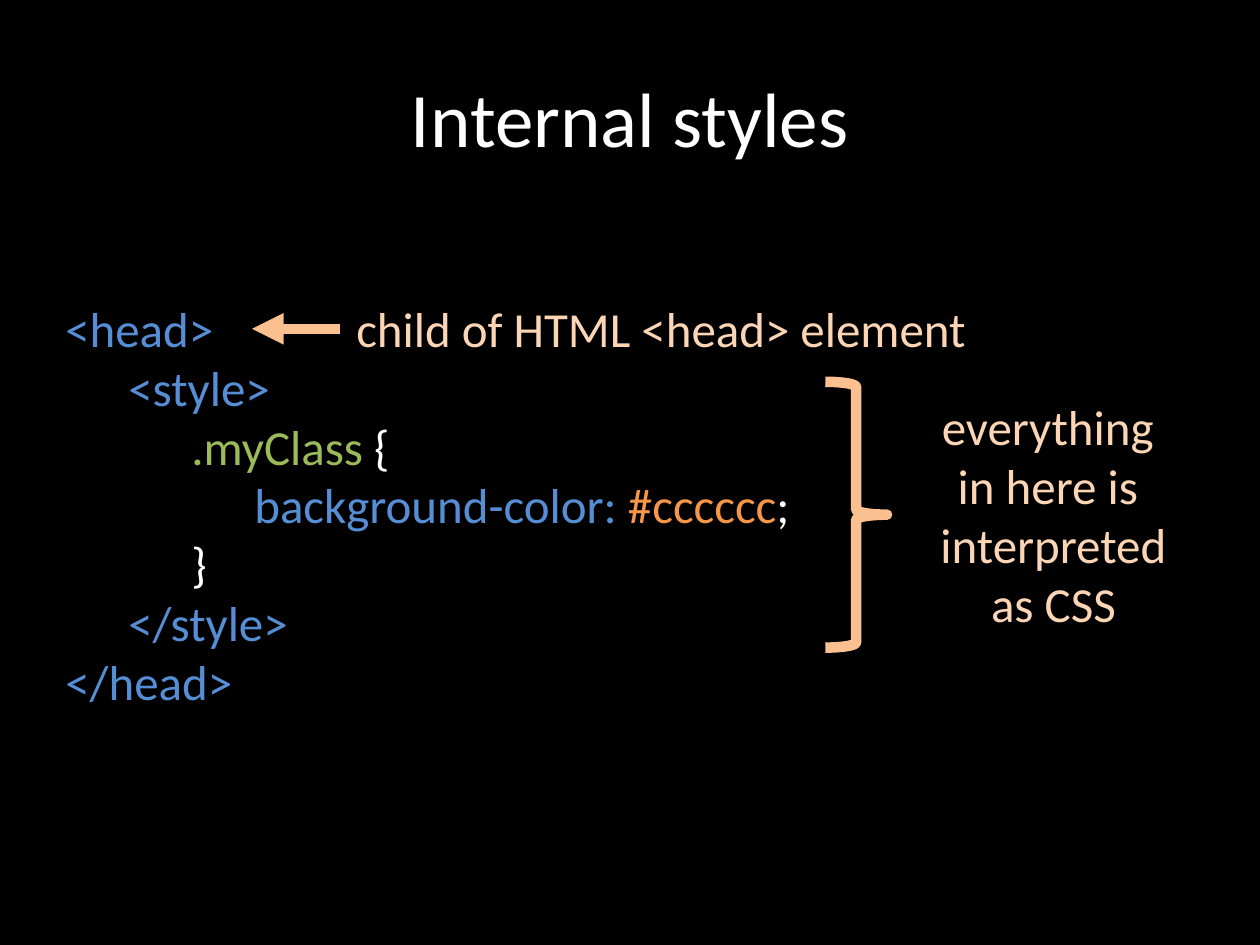
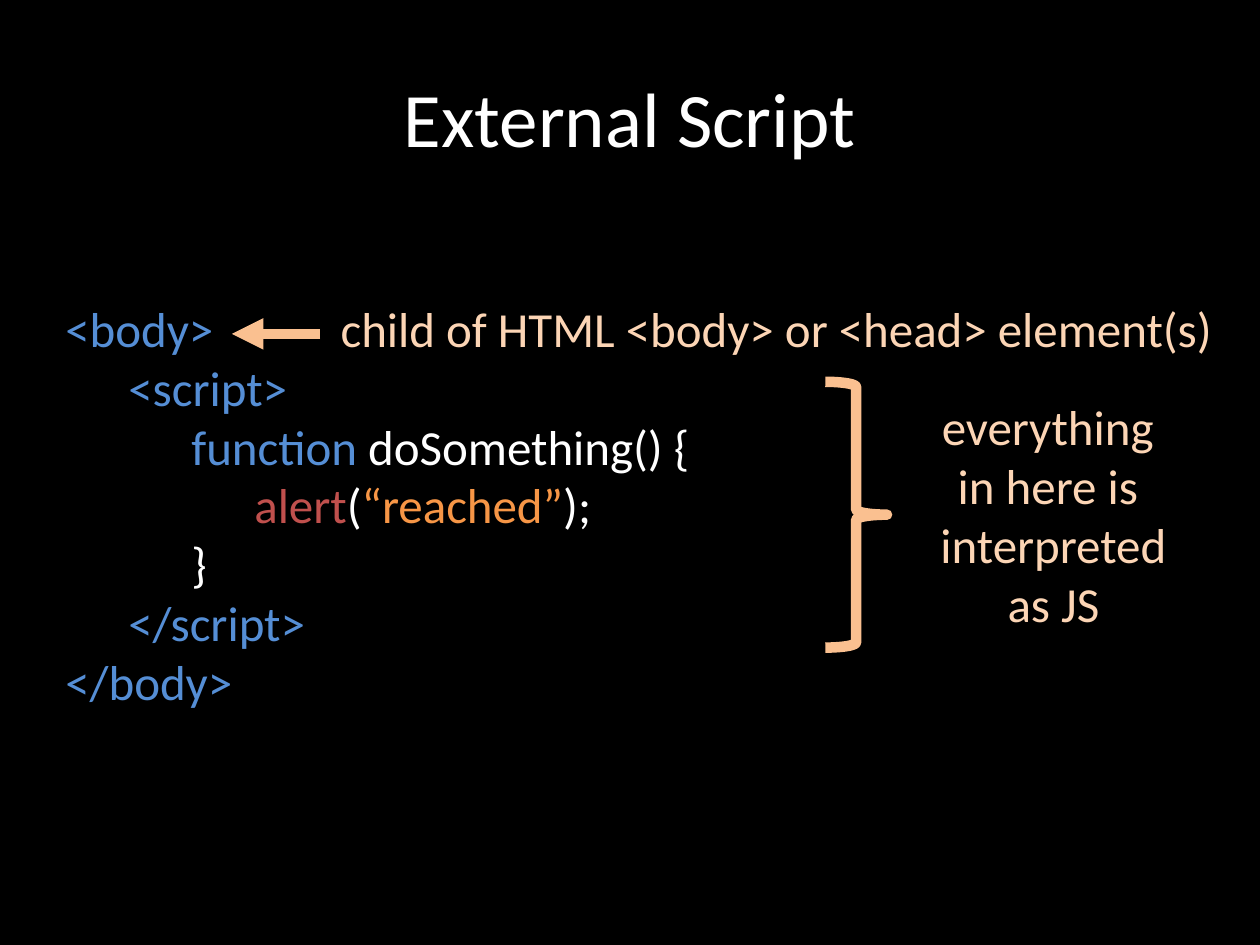
import pptx
import pptx.dml.color
import pptx.enum.shapes
import pptx.enum.text
import pptx.oxml
import pptx.oxml.ns
import pptx.util
import lxml.etree

RGBColor = pptx.dml.color.RGBColor
BLACK = RGBColor(0x00, 0x00, 0x00)
WHITE = RGBColor(0xFF, 0xFF, 0xFF)
BLUE = RGBColor(0x55, 0x8E, 0xD5)
GREEN = RGBColor(0x9B, 0xBB, 0x59)
ORANGE = RGBColor(0xF7, 0x96, 0x46)
RED = RGBColor(0xC0, 0x50, 0x4D)
PEACH = RGBColor(0xFC, 0xD5, 0xB5)
MARKER = RGBColor(0xFA, 0xC0, 0x90)

WIDTH = pptx.util.Inches(10)
HEIGHT = pptx.util.Inches(7.5)
COLUMN = WIDTH / 100
ROW = HEIGHT / 75
INDENT = pptx.util.Inches(0.5)
FONT = "Calibri"
CODE_LEFT, CODE_TOP = 4.2, 23.2
NOTE_LINES = ["everything ", "in here is ", "interpreted"]


def grid(left, top, width, height):
    return [round(length) for length in
            (left * COLUMN, top * ROW, width * COLUMN, height * ROW)]


def add_text(slide, lines, area, size=28, color=PEACH, centred=True,
             wrap=False, middle=False):
    box = slide.shapes.add_textbox(*grid(*area))
    frame = box.text_frame
    frame.word_wrap = wrap
    if middle:
        frame.vertical_anchor = pptx.enum.text.MSO_ANCHOR.MIDDLE
    else:
        frame.auto_size = pptx.enum.text.MSO_AUTO_SIZE.SHAPE_TO_FIT_TEXT
    align = pptx.enum.text.PP_ALIGN
    for number, line in enumerate(lines):
        level, pieces = (0, [(line, color)]) if isinstance(line, str) else line
        paragraph = frame.paragraphs[0] if number == 0 else frame.add_paragraph()
        paragraph.alignment = align.CENTER if centred else align.LEFT
        if level:
            properties = paragraph._p.get_or_add_pPr()
            properties.set("marL", str(level * INDENT))
            properties.set("indent", "0")
        for words, tint in pieces:
            run = paragraph.add_run()
            run.text = words
            run.font.name = FONT
            run.font.size = pptx.util.Pt(size)
            run.font.color.rgb = tint


def style_line(line):
    line.color.rgb = MARKER
    line.width = pptx.util.Pt(6)


def add_arrow(slide, start, end, row):
    left, top, right, _ = grid(end, row, start, 0)
    arrow = slide.shapes.add_connector(
        pptx.enum.shapes.MSO_CONNECTOR.STRAIGHT, right, top, left, top)
    style_line(arrow.line)
    qn = pptx.oxml.ns.qn
    tail = lxml.etree.SubElement(arrow.line._get_or_add_ln(), qn("a:tailEnd"))
    tail.set("type", "triangle")
    lxml.etree.SubElement(arrow._element.spPr, qn("a:effectLst"))


def add_brace(slide):
    brace = slide.shapes.add_shape(
        pptx.enum.shapes.MSO_SHAPE.RIGHT_BRACE, *grid(65.5, 30.3, 4.9, 21.1))
    brace.shadow.inherit = False
    brace.fill.background()
    style_line(brace.line)


def add_code_slide(deck, title, code, code_width, parent_note, note_left,
                   note_width, arrow_row, language):
    slide = deck.slides.add_slide(deck.slide_layouts[6])
    add_text(slide, [title], (5, 3, 90, 12.5), size=44, color=WHITE,
             wrap=True, middle=True)
    add_text(slide, code, (CODE_LEFT, CODE_TOP, code_width, 34), centred=False)
    add_text(slide, [parent_note], (note_left, CODE_TOP, note_width, 5.7))
    add_arrow(slide, note_left, note_left - 7, arrow_row)
    add_brace(slide)
    add_text(slide, NOTE_LINES + [f"as {language}"], (73.5, 31, 20.2, 19.9))


def main():
    deck = pptx.Presentation()
    deck.slide_width, deck.slide_height = WIDTH, HEIGHT
    backdrop = deck.slide_master.background.fill
    backdrop.solid()
    backdrop.fore_color.rgb = BLACK

    style_code = [
        (0, [("<head>", BLUE)]),
        (1, [("<style>", BLUE)]),
        (2, [(".myClass ", GREEN), ("{", WHITE)]),
        (3, [("background-color: ", BLUE), ("#cccccc", ORANGE), (";", WHITE)]),
        (2, [("}", WHITE)]),
        (1, [("</style>", BLUE)]),
        (0, [("</head>", BLUE)]),
    ]
    script_code = [
        (0, [("<body>", BLUE)]),
        (1, [("<script>", BLUE)]),
        (2, [("function ", BLUE), ("doSomething() {", WHITE)]),
        (3, [("alert", RED), ("(", WHITE), ("“reached”", ORANGE), (");", WHITE)]),
        (2, [("}", WHITE)]),
        (1, [("</script>", BLUE)]),
        (0, [("</body>", BLUE)]),
    ]
    add_code_slide(deck, "Internal styles", style_code, 60.2,
                   "child of HTML <head> element", 27, 50.9, 26.1, "CSS")
    add_code_slide(deck, "External Script", script_code, 88.8,
                   "child of HTML <body> or <head> element(s)", 25.4, 72.4,
                   26.5, "JS")
    deck.save("out.pptx")


if __name__ == "__main__":
    main()
